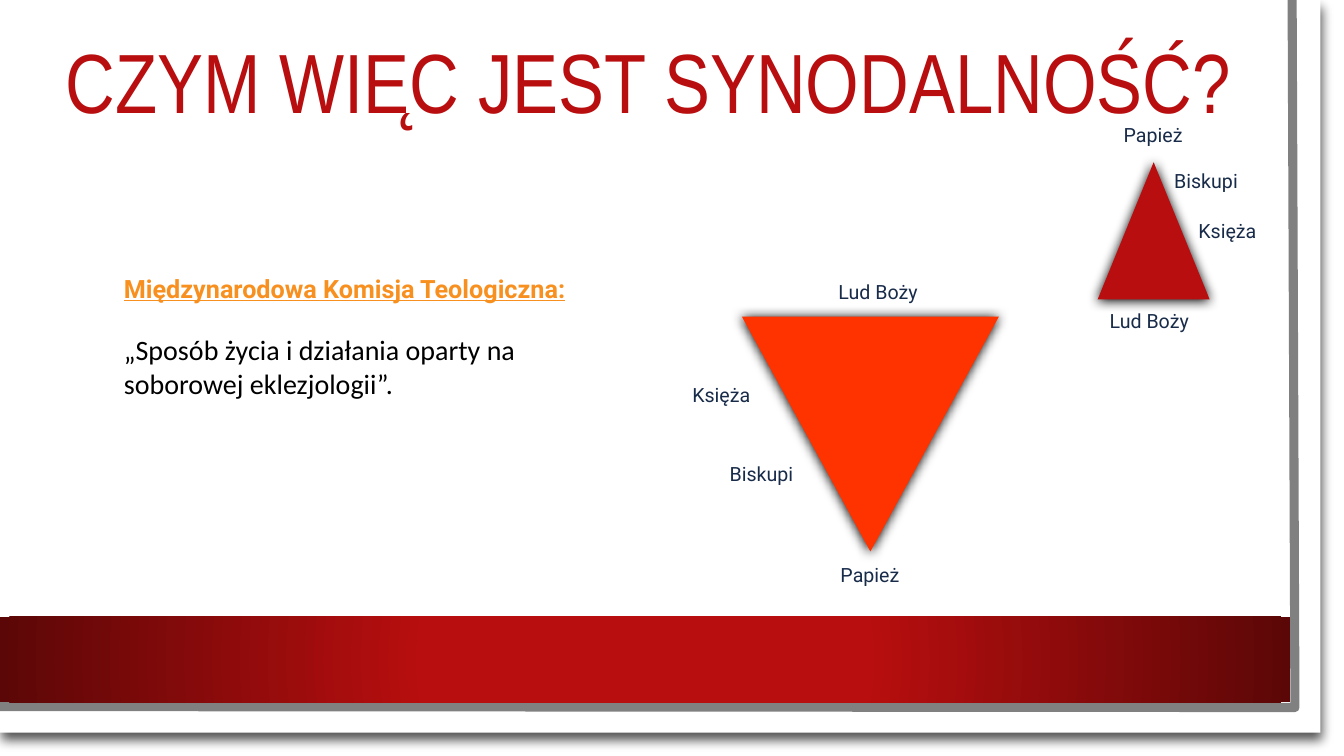
from lxml import etree
from pptx import Presentation
from pptx.dml.color import RGBColor
from pptx.enum import shapes, text
from pptx.oxml import ns
from pptx.util import Pt

COLOURS = {
    "paper": "FFFFFF", "red": "B80E0F", "dark red": "5C0707",
    "flame": "FF3300", "orange": "F8901F", "navy": "182B49",
    "grey": "808080", "black": "000000",
}
LABEL_WIDTHS = {"Papież": 57.6, "Biskupi": 59.8, "Księża": 56.9, "Lud Boży": 73.4}
LABEL_HEIGHT = 24.5


def colour(name):
    return RGBColor.from_string(COLOURS[name])


def style(paragraph, face, size, ink):
    paragraph.font.name = face
    paragraph.font.size = Pt(size)
    paragraph.font.color.rgb = colour(ink)


def add_plain(slide, kind, box):
    plain = slide.shapes.add_shape(kind, *map(Pt, box))
    plain.line.fill.background()
    plain.shadow.inherit = False
    return plain


def add_shadow(shape, opacity, blur, distance, angle):
    effects = shape.element.spPr.find(ns.qn("a:effectLst"))
    shadow = etree.SubElement(
        effects, ns.qn("a:outerShdw"), blurRad=str(Pt(blur)),
        dist=str(Pt(distance)), dir=str(angle * 60000), rotWithShape="0")
    ink = etree.SubElement(shadow, ns.qn("a:srgbClr"), val=COLOURS["black"])
    etree.SubElement(ink, ns.qn("a:alpha"), val=str(opacity * 1000))


def add_backdrop(slide, box):
    left, top, width, height = box
    card = add_plain(slide, shapes.MSO_SHAPE.RECTANGLE, box)
    card.fill.solid()
    card.fill.fore_color.rgb = colour("paper")
    add_shadow(card, 68, 7.8, 6, 73)

    right, bottom = left + width - 18.2, top + height - 18
    outline = slide.shapes.build_freeform(Pt(right - 2), Pt(top))
    outline.add_line_segments(
        [(Pt(right), Pt(bottom)), (Pt(left - 2.2), Pt(bottom - 0.7))], close=False)
    edge = outline.convert_to_shape()
    edge.fill.background()
    edge.line.color.rgb = colour("grey")
    edge.line.width = Pt(6.5)
    edge.shadow.inherit = False

    band = add_plain(slide, shapes.MSO_SHAPE.RECTANGLE,
                     (left, top + 440.6, width - 21.6, 61.2))
    band.fill.gradient()
    for stop, position, ink in zip(band.fill.gradient_stops, (0.34, 1), ("red", "dark red")):
        stop.position = position
        stop.color.rgb = colour(ink)
    gradient = band.element.spPr.find(ns.qn("a:gradFill"))
    gradient.remove(gradient.find(ns.qn("a:lin")))
    circle = etree.SubElement(gradient, ns.qn("a:path"), path="circle")
    etree.SubElement(circle, ns.qn("a:fillToRect"),
                     {side: "50000" for side in "ltrb"})


def add_title(slide, box):
    title = slide.shapes.title
    title.element.getparent().append(title.element)
    title.left, title.top, title.width, title.height = map(Pt, box)
    frame = title.text_frame
    frame.text = "CZYM WIĘC JEST SYNODALNOŚĆ?"
    frame.auto_size = text.MSO_AUTO_SIZE.NONE
    frame.vertical_anchor = text.MSO_ANCHOR.MIDDLE
    heading = frame.paragraphs[0]
    heading.alignment = text.PP_ALIGN.LEFT
    heading.line_spacing = 0.9
    style(heading, "Arial Narrow", 60, "red")


def add_definition(slide, box):
    frame = slide.shapes.add_textbox(*map(Pt, box)).text_frame
    frame.word_wrap = True
    source = frame.paragraphs[0]
    source.text = "Międzynarodowa Komisja Teologiczna:"
    style(source, "Roboto", 18, "orange")
    source.font.bold = True
    source.font.underline = True
    quote = frame.add_paragraph()
    quote.text = "„Sposób życia i działania oparty na soborowej eklezjologii”."
    quote.space_before = Pt(21)
    style(quote, "Calibri", 20, "black")


def add_pyramid(slide, box, ink, rotation, labels):
    left, top = box[:2]
    pyramid = add_plain(slide, shapes.MSO_SHAPE.ISOSCELES_TRIANGLE, box)
    pyramid.rotation = rotation
    pyramid.fill.solid()
    pyramid.fill.fore_color.rgb = colour(ink)
    add_shadow(pyramid, 100, 8.5, 1, 90)
    for rank, (across, down) in labels.items():
        label = slide.shapes.add_textbox(
            Pt(left + across), Pt(top + down), Pt(LABEL_WIDTHS[rank]), Pt(LABEL_HEIGHT))
        frame = label.text_frame
        frame.word_wrap = False
        frame.auto_size = text.MSO_AUTO_SIZE.SHAPE_TO_FIT_TEXT
        frame.text = rank
        style(frame.paragraphs[0], "Roboto", 14, "navy")


def main():
    deck = Presentation()
    deck.slide_width, deck.slide_height = Pt(960), Pt(540)
    slide = deck.slides.add_slide(deck.slide_layouts.get_by_name("Title Only"))
    add_backdrop(slide, (0, 0, 943.2, 523.4))
    add_title(slide, (39.6, 28.8, 895.7, 65.5))
    add_definition(slide, (81.4, 191.5, 378, 121))
    add_pyramid(slide, (529.9, 226.1, 183.6, 167.8), "flame", 180, {
        "Lud Boży": (61.9, -29.5), "Księża": (-42.5, 43.9),
        "Biskupi": (-15.8, 100.1), "Papież": (63.4, 172.8)})
    add_pyramid(slide, (784.1, 115.9, 79.9, 97.9), "red", 0, {
        "Papież": (11.5, -31.7), "Biskupi": (47.5, 1.4),
        "Księża": (64.8, 36.7), "Lud Boży": (1.4, 101.5)})
    deck.save("out.pptx")


if __name__ == "__main__":
    main()
